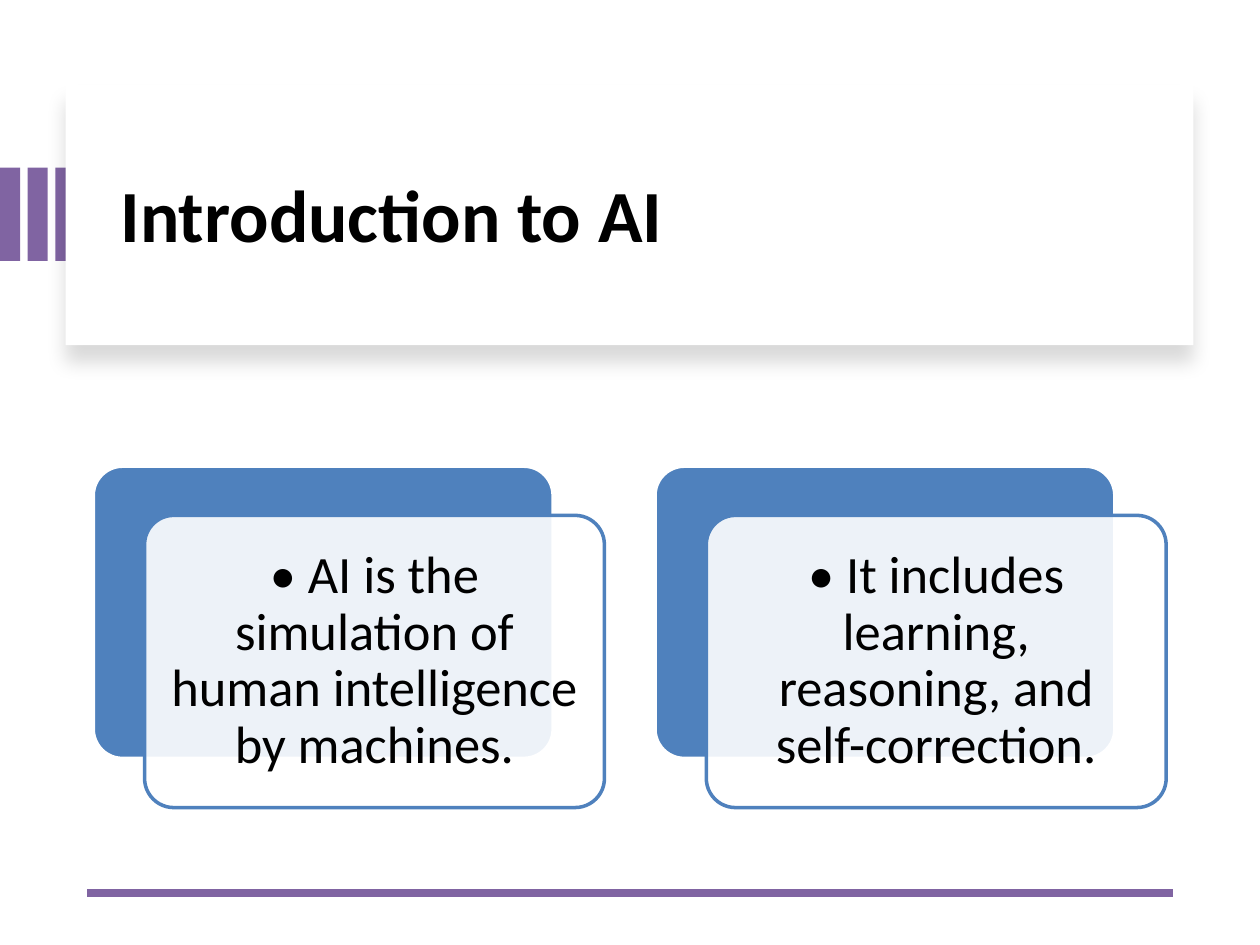
from dataclasses import dataclass

from lxml.etree import SubElement
from pptx import Presentation
from pptx.dml.color import RGBColor
from pptx.enum.shapes import MSO_CONNECTOR, MSO_SHAPE
from pptx.enum.text import MSO_ANCHOR, PP_ALIGN
from pptx.oxml import parse_xml
from pptx.oxml.ns import nsdecls, qn
from pptx.shapes.autoshape import Shape
from pptx.slide import Slide
from pptx.util import Pt

PURPLE = RGBColor(0x80, 0x64, 0xA2)
BLUE = RGBColor(0x4F, 0x81, 0xBD)
WHITE = RGBColor(0xFF, 0xFF, 0xFF)
BLACK = RGBColor(0, 0, 0)
FONT = "Calibri"
CARD_LEFT, CARD_TOP, CARD_PITCH = 53.3, 266.4, 321
CARD_WIDTH, CARD_HEIGHT = 262.8, 167
FRONT_SHIFT_X, FRONT_SHIFT_Y = 29.3, 28.1
TEXT_INSET = 4.9


@dataclass(frozen=True)
class Box:
    left: float
    top: float
    width: float
    height: float

    def lengths(self) -> tuple[Pt, Pt, Pt, Pt]:
        return Pt(self.left), Pt(self.top), Pt(self.width), Pt(self.height)

    def shifted(self, across: float, down: float) -> "Box":
        return Box(self.left + across, self.top + down, self.width, self.height)

    def inset(self, margin: float) -> "Box":
        return Box(self.left + margin, self.top + margin,
                   self.width - 2 * margin, self.height - 2 * margin)


@dataclass(frozen=True)
class TextStyle:
    size: float
    bold: bool
    alignment: PP_ALIGN
    margin_x: float
    margin_y: float
    space_after: float


TITLE_STYLE = TextStyle(42, True, PP_ALIGN.LEFT, 7.2, 3.6, 0)
CARD_STYLE = TextStyle(30, False, PP_ALIGN.CENTER, 8.64, 8.64, 10.5)
CARD_TEXTS = (
    "• AI is the simulation of human intelligence by machines.",
    "• It includes learning, reasoning, and self-correction.",
)


def add_rectangle(slide: Slide, box: Box, fill: RGBColor) -> Shape:
    shape = slide.shapes.add_shape(MSO_SHAPE.RECTANGLE, *box.lengths())
    shape.shadow.inherit = False
    shape.fill.solid()
    shape.fill.fore_color.rgb = fill
    shape.line.fill.background()
    return shape


def add_rounded(slide: Slide, box: Box, fill: RGBColor, outline: RGBColor) -> Shape:
    shape = slide.shapes.add_shape(MSO_SHAPE.ROUNDED_RECTANGLE, *box.lengths())
    shape.adjustments[0] = 0.1
    shape.shadow.inherit = False
    shape.fill.solid()
    shape.fill.fore_color.rgb = fill
    shape.line.color.rgb = outline
    shape.line.width = Pt(2)
    return shape


def add_text(slide: Slide, box: Box, text: str, style: TextStyle) -> None:
    text_frame = slide.shapes.add_textbox(*box.lengths()).text_frame
    text_frame.word_wrap = True
    text_frame.vertical_anchor = MSO_ANCHOR.MIDDLE
    text_frame.margin_left = text_frame.margin_right = Pt(style.margin_x)
    text_frame.margin_top = text_frame.margin_bottom = Pt(style.margin_y)
    text_frame.text = text
    paragraph = text_frame.paragraphs[0]
    paragraph.alignment = style.alignment
    paragraph.line_spacing = 0.9
    paragraph.space_after = Pt(style.space_after)
    font = paragraph.runs[0].font
    font.name = FONT
    font.size = Pt(style.size)
    font.bold = style.bold
    font.color.rgb = BLACK


def add_panel(slide: Slide, box: Box) -> None:
    panel = add_rectangle(slide, box, WHITE)
    effects = panel.element.spPr.find(qn("a:effectLst"))
    effects.append(parse_xml(
        f'<a:outerShdw {nsdecls("a")} blurRad="{Pt(11)}" dist="{Pt(10)}" '
        'dir="5400000" algn="t" rotWithShape="0">'
        f'<a:srgbClr val="{BLACK}"><a:alpha val="15000"/></a:srgbClr></a:outerShdw>'
    ))


def add_card(slide: Slide, box: Box, text: str) -> None:
    add_rounded(slide, box, BLUE, WHITE)
    front_box = box.shifted(FRONT_SHIFT_X, FRONT_SHIFT_Y)
    front = add_rounded(slide, front_box, WHITE, BLUE)
    color = front.element.spPr.find(qn("a:solidFill")).find(qn("a:srgbClr"))
    SubElement(color, qn("a:alpha")).set("val", "90000")
    add_text(slide, front_box.inset(TEXT_INSET), text, CARD_STYLE)


def add_rule(slide: Slide, left: float, right: float, top: float) -> None:
    rule = slide.shapes.add_connector(
        MSO_CONNECTOR.STRAIGHT, Pt(right), Pt(top), Pt(left), Pt(top))
    rule.line.color.rgb = PURPLE
    rule.line.width = Pt(4.5)
    SubElement(rule.element.spPr, qn("a:effectLst"))


def main() -> None:
    presentation = Presentation()
    presentation.slide_width, presentation.slide_height = Pt(720), Pt(540)
    slide = presentation.slides.add_slide(presentation.slide_layouts[6])
    first_stripe = Box(0, 95.8, 11.5, 53.3)
    for index in range(3):
        add_rectangle(slide, first_stripe.shifted(index * 15.8, 0), PURPLE)
    add_panel(slide, Box(37.5, 48.3, 644.4, 149))
    add_text(slide, Box(61.9, 64, 600.5, 122.4), "Introduction to AI", TITLE_STYLE)
    add_rule(slide, 49.7, 670.3, 510.5)
    first_card = Box(CARD_LEFT, CARD_TOP, CARD_WIDTH, CARD_HEIGHT)
    for index, text in enumerate(CARD_TEXTS):
        add_card(slide, first_card.shifted(index * CARD_PITCH, 0), text)
    presentation.save("out.pptx")


if __name__ == "__main__":
    main()
